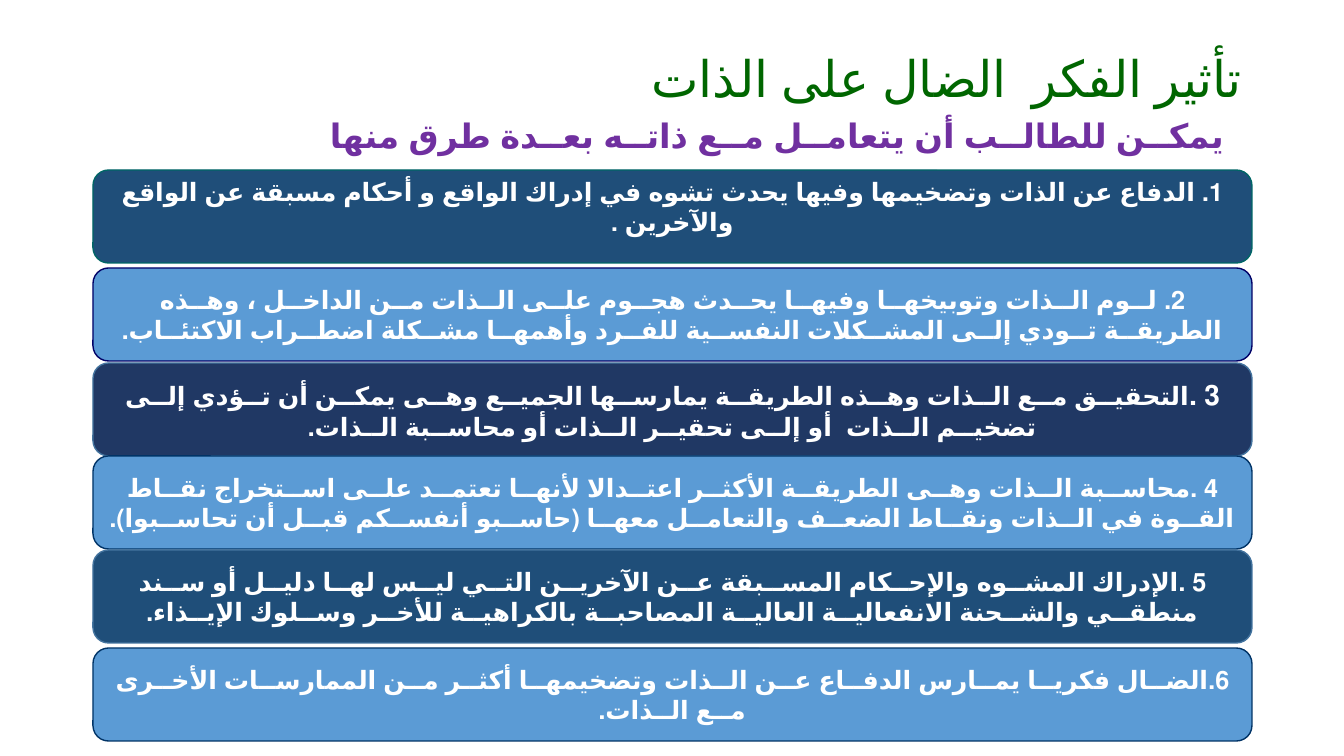
from dataclasses import dataclass

from pptx import Presentation
from pptx.dml.color import RGBColor
from pptx.enum.lang import MSO_LANGUAGE_ID as Language
from pptx.enum.shapes import MSO_SHAPE as Preset
from pptx.enum.text import MSO_ANCHOR as Anchor, PP_ALIGN as Align
from pptx.util import Emu, Pt

SLIDE_WIDTH, SLIDE_HEIGHT = 1344, 756
EMU_PER_PX = 12192000 / SLIDE_WIDTH


@dataclass(frozen=True)
class Theme:
    font: str = "Calibri"
    title: str = "006600"
    subtitle: str = "7030A0"
    text: str = "FFFFFF"
    dark: str = "1F4E79"
    light: str = "5B9BD5"
    navy: str = "203864"
    green_line: str = "006666"
    indigo_line: str = "000066"
    steel_line: str = "43739E"
    blue_line: str = "003366"
    title_size: int = 36
    subtitle_size: int = 24
    number_size: int = 20
    body_size: int = 18


THEME = Theme()
CARD_LEFT, CARD_WIDTH, CARD_HEIGHT = 93, 1159, 93

# Top, fill, line, larger lead-in, text
CARDS = [
    (170, THEME.dark, THEME.green_line, "",
     "1. الدفاع عن الذات وتضخيمها وفيها يحدث تشوه في إدراك الواقع و أحكام مسبقة عن الواقع والآخرين ."),
    (268, THEME.light, THEME.indigo_line, "",
     "2. لــوم الــذات وتوبيخهــا وفيهــا يحــدث هجــوم علــى الــذات مــن الداخــل ، وهــذه الطريقــة تــودي إلــى المشــكلات النفســية للفــرد وأهمهــا مشــكلة اضطــراب الاكتئــاب."),
    (363, THEME.navy, THEME.steel_line, "3 .",
     "التحقيــق مــع الــذات وهــذه الطريقــة يمارســها الجميــع وهــى يمكــن أن تــؤدي إلــى تضخيــم الــذات  أو إلــى تحقيــر الــذات أو محاســبة الــذات."),
    (456, THEME.light, THEME.blue_line, "",
     "4 .محاســبة الــذات وهــى الطريقــة الأكثــر اعتــدالا لأنهــا تعتمــد علــى اســتخراج نقــاط القــوة في الــذات ونقــاط الضعــف والتعامــل معهــا (حاســبو أنفســكم قبــل أن تحاســبوا)."),
    (550, THEME.dark, THEME.steel_line, "",
     "5 .الإدراك المشــوه والإحــكام المســبقة عــن الآخريــن التــي ليــس لهــا دليــل أو ســند منطقــي والشــحنة الانفعاليــة العاليــة المصاحبــة بالكراهيــة للأخــر وســلوك الإيــذاء."),
    (648, THEME.light, THEME.blue_line, "",
     "6.الضــال فكريــا يمــارس الدفــاع عــن الــذات وتضخيمهــا أكثــر مــن الممارســات الأخــرى مــع الــذات."),
]


def px(value):
    return Emu(round(value * EMU_PER_PX))


def format_run(run, size, color, bold):
    run.font.name = THEME.font
    run.font.size = Pt(size)
    run.font.bold = bold
    run.font.language_id = Language.ARABIC
    run.font.color.rgb = RGBColor.from_string(color)


def format_paragraph(paragraph, align, size, color, bold=True):
    """Right-to-left paragraph with one run format."""
    paragraph.alignment = align
    paragraph._p.get_or_add_pPr().set("rtl", "1")
    for run in paragraph.runs:
        format_run(run, size, color, bold)


def add_title(slide, text):
    title = slide.shapes.title
    title.left, title.top, title.width, title.height = map(px, (93, 8, 1159, 146))
    frame = title.text_frame
    frame.text = text
    frame.vertical_anchor = Anchor.MIDDLE
    paragraph = frame.paragraphs[0]
    paragraph.line_spacing = 0.9
    format_paragraph(paragraph, Align.RIGHT, THEME.title_size, THEME.title, False)


def add_subtitle(slide, text):
    box = slide.shapes.add_textbox(*map(px, (76, 115, 1158, 50)))
    frame = box.text_frame
    frame.word_wrap = True
    frame.text = text
    paragraph = frame.paragraphs[0]
    paragraph.line_spacing = 0.9
    format_paragraph(paragraph, Align.RIGHT, THEME.subtitle_size, THEME.subtitle)


def add_card(slide, top, fill, line, lead, text):
    card = slide.shapes.add_shape(
        Preset.ROUNDED_RECTANGLE, *map(px, (CARD_LEFT, top, CARD_WIDTH, CARD_HEIGHT)))
    card.shadow.inherit = False
    card.fill.solid()
    card.fill.fore_color.rgb = RGBColor.from_string(fill)
    card.line.color.rgb = RGBColor.from_string(line)
    card.line.width = Pt(1)
    frame = card.text_frame
    frame.word_wrap = True
    frame.vertical_anchor = Anchor.MIDDLE
    paragraph = frame.paragraphs[0]
    paragraph.text = lead or text
    if lead:
        paragraph.add_run().text = text
    format_paragraph(paragraph, Align.CENTER, THEME.body_size, THEME.text)
    if lead:
        paragraph.runs[0].font.size = Pt(THEME.number_size)
    return card


def main():
    presentation = Presentation()
    presentation.slide_width = px(SLIDE_WIDTH)
    presentation.slide_height = px(SLIDE_HEIGHT)
    slide = presentation.slides.add_slide(presentation.slide_layouts[5])

    # Numbered cards
    cards = [add_card(slide, *card) for card in CARDS]
    # The first card's text sits at its top
    cards[0].text_frame.vertical_anchor = Anchor.TOP
    cards[0].text_frame.margin_top = px(2)

    # Headings
    add_title(slide, "تأثير الفكر  الضال على الذات")
    add_subtitle(slide, "يمكــن للطالــب أن يتعامــل مــع ذاتــه بعــدة طرق منها")

    presentation.save("out.pptx")


if __name__ == "__main__":
    main()
